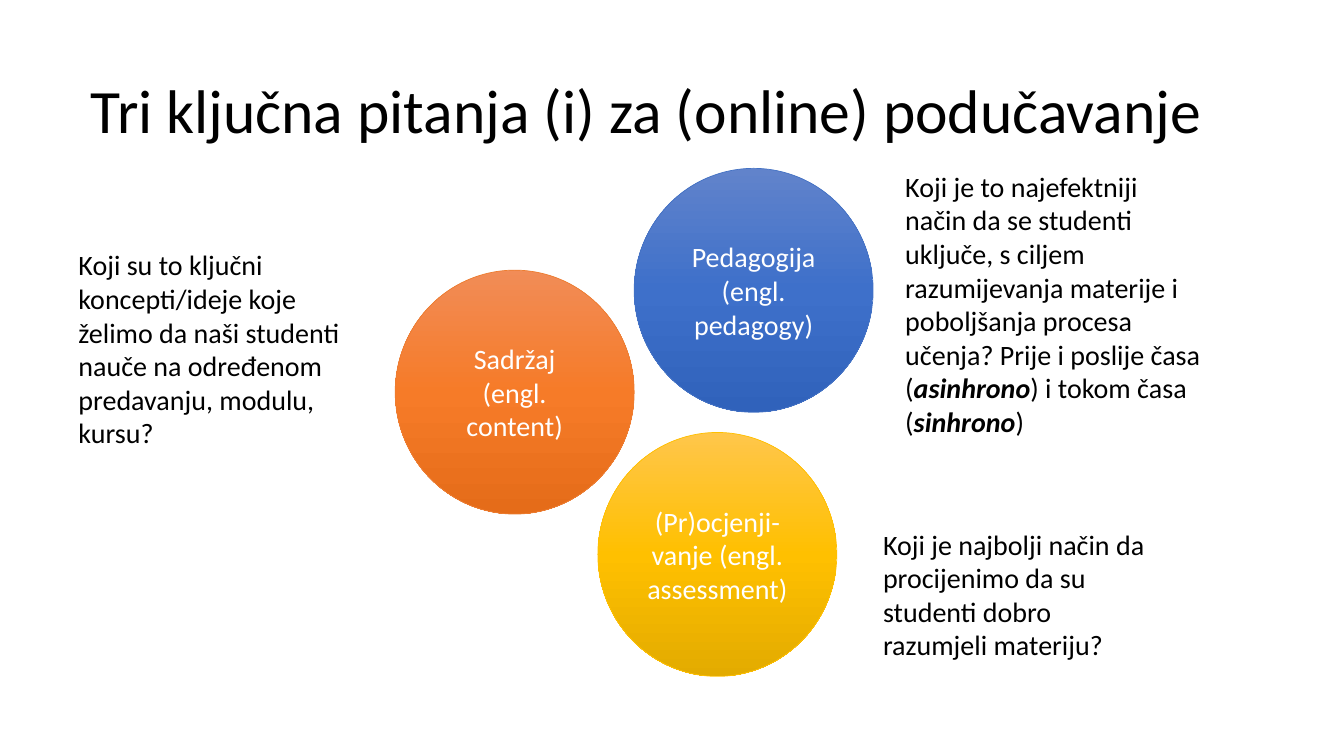
from copy import deepcopy

from pptx import Presentation
from pptx.dml.color import RGBColor
from pptx.enum.shapes import MSO_SHAPE
from pptx.enum.text import MSO_ANCHOR, MSO_AUTO_SIZE, PP_ALIGN
from pptx.oxml.ns import qn
from pptx.util import Inches, Pt

OVAL = MSO_SHAPE.OVAL
MIDDLE = MSO_ANCHOR.MIDDLE
CENTER = PP_ALIGN.CENTER
GROW = MSO_AUTO_SIZE.SHAPE_TO_FIT_TEXT

BLACK = RGBColor(0x00, 0x00, 0x00)
WHITE = RGBColor(0xFF, 0xFF, 0xFF)
ORANGE = RGBColor(0xED, 0x7D, 0x31)
ORANGES = [RGBColor(0xF1, 0x8C, 0x57), RGBColor(0xF6, 0x7B, 0x28), RGBColor(0xE5, 0x6C, 0x19)]
BLUE = RGBColor(0x44, 0x72, 0xC4)
BLUES = [RGBColor(0x61, 0x83, 0xCB), RGBColor(0x3E, 0x70, 0xCA), RGBColor(0x30, 0x62, 0xBB)]
GOLD = RGBColor(0xFF, 0xC0, 0x00)
GOLDS = [RGBColor(0xFF, 0xC6, 0x4B), GOLD, RGBColor(0xE3, 0xAB, 0x00)]

TITLE = "Tri ključna pitanja (i) za (online) podučavanje"
CIRCLE_SIZE = (2.37, 2.42)
CIRCLES = [
    ("Sadržaj (engl. content)", (3.92, 2.68), ORANGE, ORANGES),
    ("Pedagogija (engl. pedagogy)", (6.29, 1.67), BLUE, BLUES),
    ("(Pr)ocjenji-vanje (engl. assessment)", (5.93, 4.29), GOLD, GOLDS),
]
EMPHASIS = {"bold": True, "italic": True}
QUESTIONS = [
    ((0.68, 2.41, 2.83, 2.12), [
        ("Koji su to ključni koncepti/ideje koje želimo da naši studenti "
         "nauče na određenom predavanju, modulu, kursu?", {}),
    ]),
    ((8.88, 1.63, 3.15, 2.79), [
        ("Koji je to najefektniji način da se studenti uključe, s ciljem razumijevanja "
         "materije i poboljšanja procesa učenja? Prije i poslije časa (", {}),
        ("asinhrono", EMPHASIS),
        (") i tokom časa (", {}),
        ("sinhrono", EMPHASIS),
        (")", {}),
    ]),
    ((8.66, 5.18, 2.83, 1.45), [
        ("Koji je najbolji način da procijenimo da su studenti dobro razumjeli materiju?", {}),
    ]),
]


def add_run(p, text, size, color, **style):
    r = p.add_run()
    r.text = text
    r.font.color.rgb = color
    for name, value in {"name": "Calibri", "size": Pt(size), **style}.items():
        setattr(r.font, name, value)


def shade(fill, colors):
    fill.gradient()
    fill.gradient_angle = 270
    first = next(fill._xPr.iter(qn("a:gs")))
    first.addnext(deepcopy(first))
    for i, (stop, color) in enumerate(zip(fill.gradient_stops, colors)):
        stop.position = i / 2
        stop.color.rgb = color


def add_circle(slide, text, spot, edge, colors):
    sp = slide.shapes.add_shape(OVAL, *map(Inches, spot + CIRCLE_SIZE))
    sp.shadow.inherit = False
    shade(sp.fill, colors)
    sp.line.color.rgb = edge
    sp.line.width = Pt(0.5)
    tf = sp.text_frame
    tf.word_wrap = True
    tf.vertical_anchor = MIDDLE
    p = tf.paragraphs[0]
    p.alignment = CENTER
    add_run(p, text, 20, WHITE)


def add_question(slide, box, runs):
    tf = slide.shapes.add_textbox(*map(Inches, box)).text_frame
    tf.word_wrap = True
    tf.auto_size = GROW
    for text, style in runs:
        add_run(tf.paragraphs[0], text, 20, BLACK, **style)


def main():
    prs = Presentation()
    prs.slide_width, prs.slide_height = Inches(13.33), Inches(7.5)
    slide = prs.slides.add_slide(prs.slide_layouts[5])

    title = slide.shapes.title
    title.left, title.top, title.width, title.height = map(Inches, (0, 0.4, 12.83, 1.45))
    title.text_frame.vertical_anchor = MIDDLE
    p = title.text_frame.paragraphs[0]
    p.alignment = CENTER
    p.line_spacing = 0.9
    add_run(p, TITLE, 44, BLACK)

    for circle in CIRCLES:
        add_circle(slide, *circle)
    for question in QUESTIONS:
        add_question(slide, *question)

    prs.save("out.pptx")


if __name__ == "__main__":
    main()
